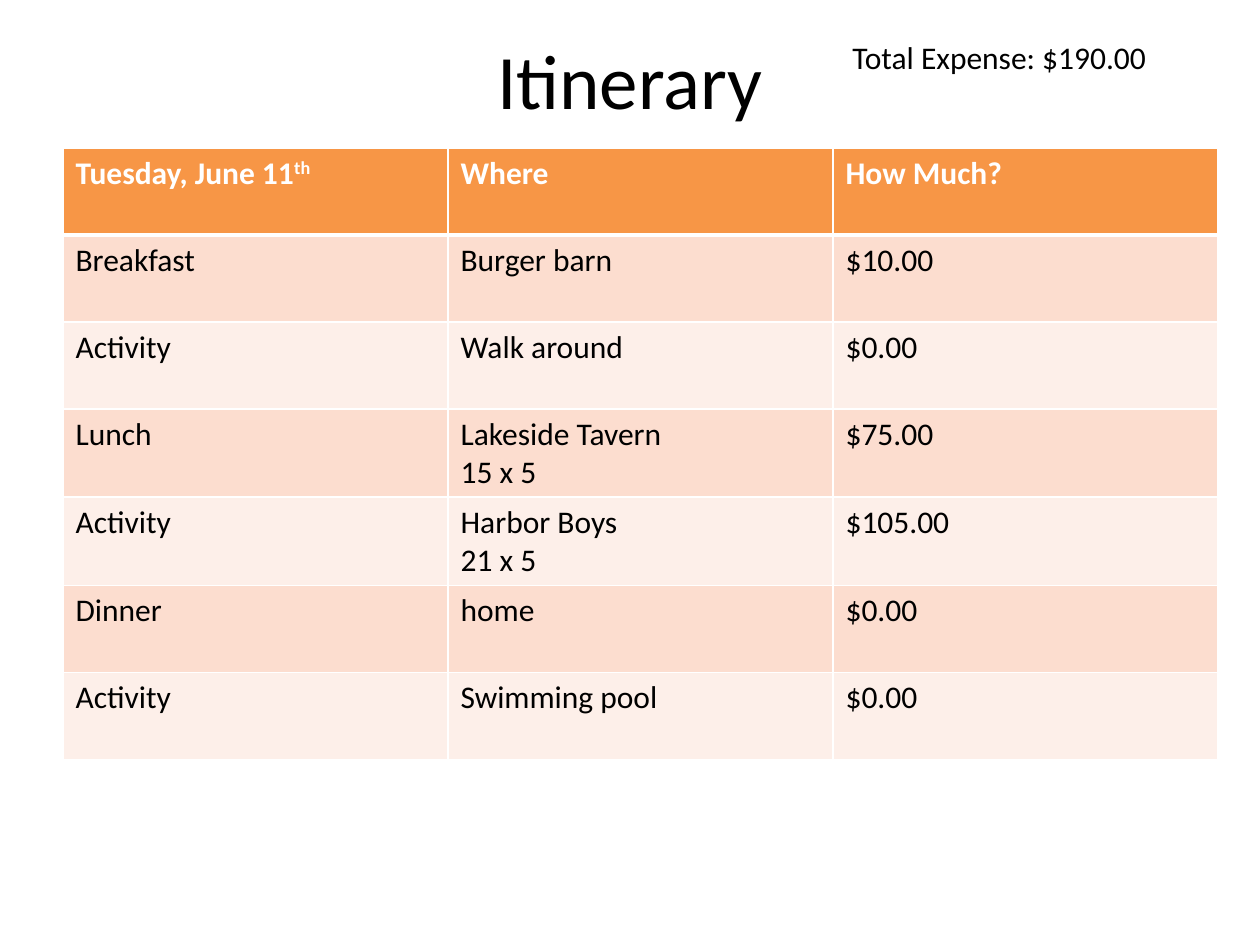
from lxml import etree
from pptx import Presentation
from pptx import util as u
from pptx.dml.color import RGBColor
from pptx.enum import text
from pptx.oxml import ns

PX_PER_INCH = 126
FONT = "Calibri"
BLACK, WHITE = "000000", "FFFFFF"
HEADER_FILL = "F79646"
BAND_FILLS = ("FCDDCF", "FDEFE9")

HEADINGS = ("Tuesday, June 11", "Where", "How Much?")
PLANS = (
    ("Breakfast", "Burger barn", "$10.00"),
    ("Activity", "Walk around", "$0.00"),
    ("Lunch", "Lakeside Tavern\n15 x 5", "$75.00"),
    ("Activity", "Harbor Boys\n21 x 5", "$105.00"),
    ("Dinner", "home", "$0.00"),
    ("Activity", "Swimming pool", "$0.00"),
)


def px(length):
    return u.Emu(round(length * 914400 / PX_PER_INCH))


def color(hex_value):
    return RGBColor.from_string(hex_value)


def format_run(run, size, hex_value, bold=False):
    values = {"name": FONT, "size": u.Pt(size), "bold": bold}
    for key, value in values.items():
        setattr(run.font, key, value)
    run.font.color.rgb = color(hex_value)


def format_frame(frame, size, hex_value, bold=False):
    for paragraph in frame.paragraphs:
        for run in paragraph.runs:
            format_run(run, size, hex_value, bold)


def add_border(cell, side, points):
    line = etree.SubElement(cell._tc.get_or_add_tcPr(), ns.qn(f"a:ln{side}"),
                            w=str(u.Pt(points)))
    fill = etree.SubElement(line, ns.qn("a:solidFill"))
    etree.SubElement(fill, ns.qn("a:srgbClr"), val=WHITE)


def place_title(slide, left, top, width, height):
    title = slide.shapes.title
    box = {"left": left, "top": top, "width": width, "height": height}
    for key, value in box.items():
        setattr(title, key, px(value))
    frame = title.text_frame
    frame.text = "Itinerary"
    frame.vertical_anchor = text.MSO_ANCHOR.MIDDLE
    frame.paragraphs[0].alignment = text.PP_ALIGN.CENTER
    format_frame(frame, 44, BLACK)


def add_total(slide, *box):
    total = slide.shapes.add_textbox(*map(px, box))
    frame = total.text_frame
    frame.word_wrap = True
    frame.auto_size = text.MSO_AUTO_SIZE.SHAPE_TO_FIT_TEXT
    frame.text = "Total Expense: $190.00"
    format_frame(frame, 18, BLACK)


def fill_cell(cell, wording, row):
    is_header = row == 0
    # The heavy rule is shared by the header and the first plan.
    widths = {"L": 1, "R": 1, "T": 3 if row == 1 else 1, "B": 3 if is_header else 1}
    for side, points in widths.items():
        add_border(cell, side, points)
    cell.fill.solid()
    cell.fill.fore_color.rgb = color(HEADER_FILL if is_header else BAND_FILLS[(row - 1) % 2])
    cell.text_frame.text = wording
    format_frame(cell.text_frame, 18, WHITE if is_header else BLACK, is_header)


def add_itinerary(slide, left, top, width, height):
    rows = (HEADINGS, *PLANS)
    table = slide.shapes.add_table(len(rows), len(HEADINGS),
                                   *map(px, (left, top, width, height))).table
    for column in table.columns:
        column.width = px(width // len(HEADINGS))
    for row, wordings in enumerate(rows):
        table.rows[row].height = px(height // len(rows))
        for column, wording in enumerate(wordings):
            fill_cell(table.cell(row, column), wording, row)

    ordinal = table.cell(0, 0).text_frame.paragraphs[0].add_run()
    ordinal.text = "th"
    format_run(ordinal, 18, WHITE, True)
    ordinal._r.get_or_add_rPr().set("baseline", "30000")


def main():
    deck = Presentation()
    deck.slide_width, deck.slide_height = px(1260), px(945)
    slide = deck.slides.add_slide(deck.slide_layouts[5])
    place_title(slide, 63, 0, 1134, 158)
    add_total(slide, 840, 32, 388, 50)
    add_itinerary(slide, 63, 148, 1155, 609)
    deck.save("out.pptx")


if __name__ == "__main__":
    main()
